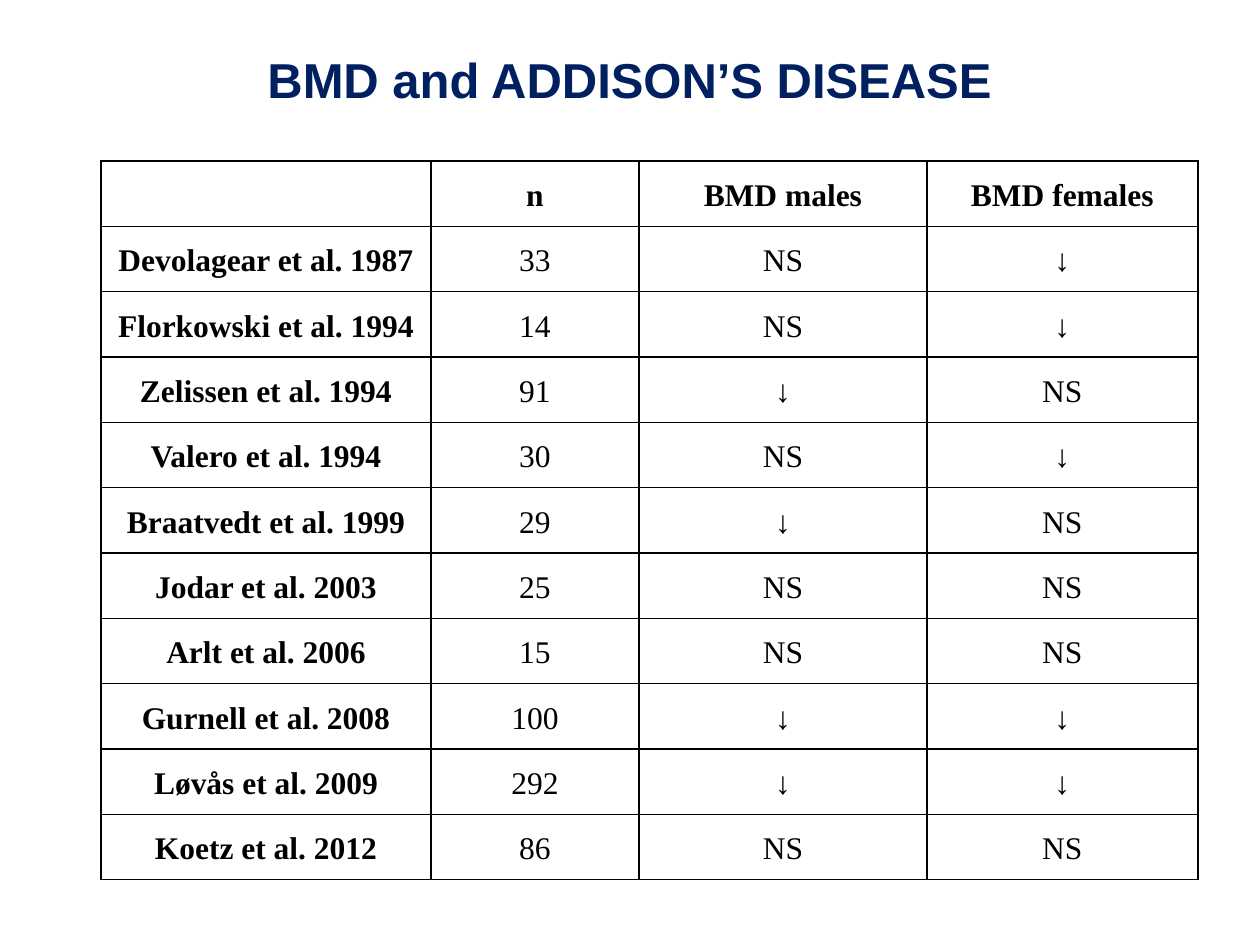
from lxml import etree
from pptx import Presentation
from pptx.dml.color import RGBColor
from pptx.enum.text import MSO_ANCHOR, PP_ALIGN
from pptx.oxml.ns import qn
from pptx.util import Pt

PX = 914400 // 126
CENTER = PP_ALIGN.CENTER
TOP = MSO_ANCHOR.TOP
COLORS = {"title": "002060", "text": "000000", "border": "000000"}

TITLE = "BMD and ADDISON’S DISEASE"
HEADER = ("", "n", "BMD males", "BMD females")
STUDIES = [
    ("Devolagear et al. 1987", "33", "NS", "↓"),
    ("Florkowski et al. 1994", "14", "NS", "↓"),
    ("Zelissen et al. 1994", "91", "↓", "NS"),
    ("Valero et al. 1994", "30", "NS", "↓"),
    ("Braatvedt et al. 1999", "29", "↓", "NS"),
    ("Jodar et al. 2003", "25", "NS", "NS"),
    ("Arlt et al. 2006", "15", "NS", "NS"),
    ("Gurnell et al. 2008", "100", "↓", "↓"),
    ("Løvås et al. 2009", "292", "↓", "↓"),
    ("Koetz et al. 2012", "86", "NS", "NS"),
]
ROWS = [HEADER] + STUDIES
COLUMN_WIDTHS = (330, 208, 288, 271)
TABLE_LEFT, TABLE_TOP, TABLE_HEIGHT = 101, 161, 719


def style_text(paragraph, font_name, size, color, bold):
    paragraph.alignment = CENTER
    for span in paragraph.runs:
        span.font.name = font_name
        span.font.size = Pt(size)
        span.font.bold = bold
        span.font.color.rgb = RGBColor.from_string(COLORS[color])


def add_borders(cell):
    properties = cell._tc.get_or_add_tcPr()
    for position, side in enumerate(("a:lnL", "a:lnR", "a:lnT", "a:lnB")):
        line = etree.Element(qn(side), w=str(Pt(1)))
        fill = etree.SubElement(line, qn("a:solidFill"))
        etree.SubElement(fill, qn("a:srgbClr"), val=COLORS["border"])
        properties.insert(position, line)


deck = Presentation()
deck.slide_width, deck.slide_height = 1260 * PX, 945 * PX
page = deck.slides.add_slide(deck.slide_layouts[6])

# Table of studies
table = page.shapes.add_table(
    len(ROWS), len(HEADER), TABLE_LEFT * PX, TABLE_TOP * PX,
    sum(COLUMN_WIDTHS) * PX, TABLE_HEIGHT * PX).table
table.horz_banding = False
table.first_row = False
for column, width in zip(table.columns, COLUMN_WIDTHS):
    column.width = width * PX
for row in table.rows:
    row.height = TABLE_HEIGHT * PX // len(ROWS)

for row_index, values in enumerate(ROWS):
    for column_index, value in enumerate(values):
        cell = table.cell(row_index, column_index)
        cell.text_frame.text = value
        cell.fill.background()
        cell.vertical_anchor = TOP
        cell.margin_left = cell.margin_right = 9 * PX
        cell.margin_top = cell.margin_bottom = 0
        para = cell.text_frame.paragraphs[0]
        para.line_spacing = 1.5
        is_heading = row_index == 0 or column_index == 0
        style_text(para, "Times New Roman", 18, "text", is_heading)
        add_borders(cell)

# Title
box = page.shapes.add_textbox(251 * PX, 43 * PX, 757 * PX, 72 * PX)
box.text_frame.word_wrap = False
box.text_frame.text = TITLE
style_text(box.text_frame.paragraphs[0], "Arial", 28, "title", True)

deck.save("out.pptx")
